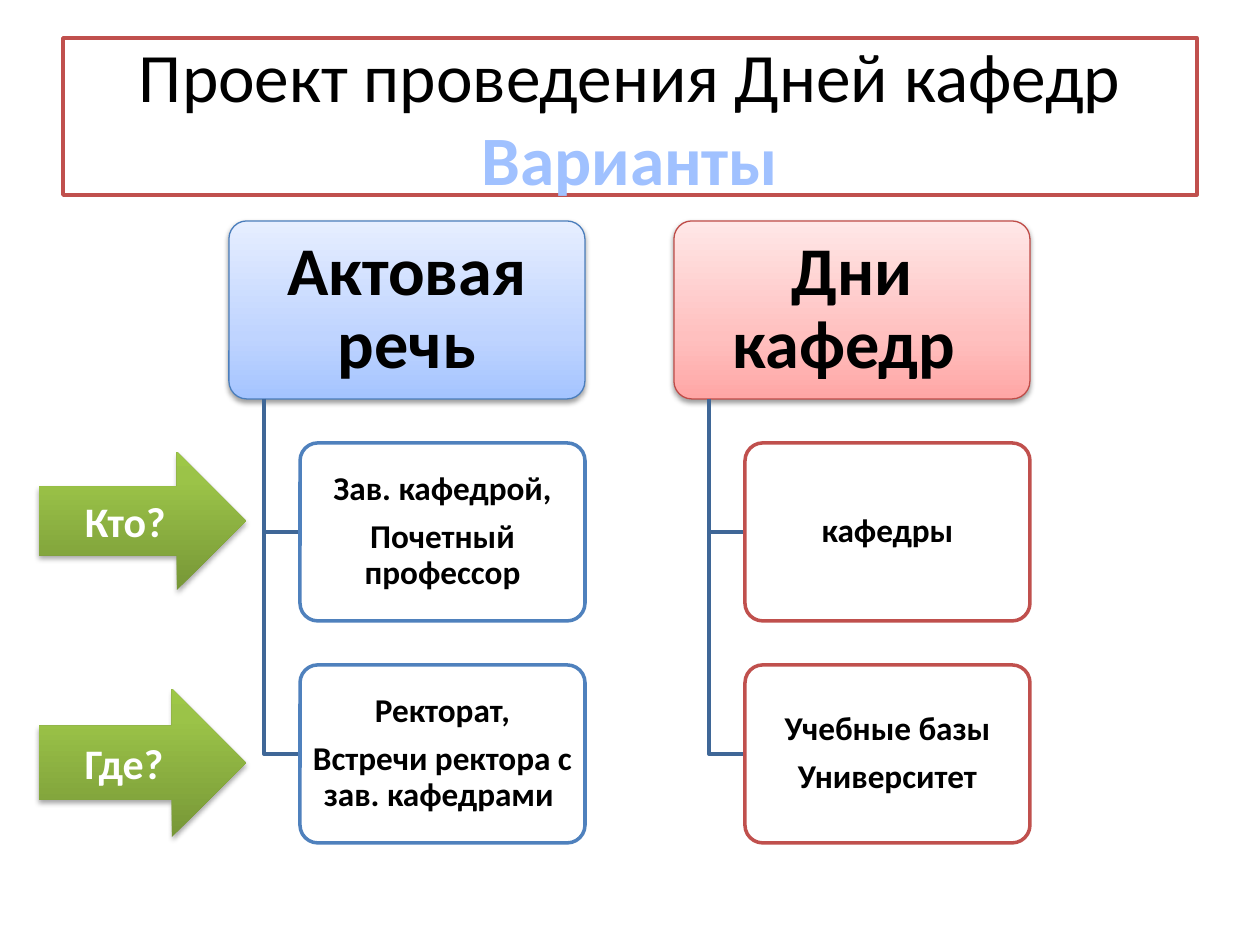
from lxml import etree
from pptx import Presentation, util as u
from pptx.dml.color import RGBColor
from pptx.enum import shapes, text
from pptx.oxml.ns import qn

TITLE = ("Проект проведения Дней кафедр", "Варианты")
COLUMNS = [
    dict(head="Актовая речь", tone="blue", cards=[
        ["Зав. кафедрой,", "Почетный профессор"],
        ["Ректорат,", "Встречи ректора с зав. кафедрами "]]),
    dict(head="Дни кафедр ", tone="red", cards=[
        ["кафедры"],
        ["Учебные базы", "Университет"]]),
]
ARROWS = [("Кто?", 452, 138), ("Где?", 689, 148)]

THEME = dict(
    font="Calibri", ink="000000", paper="FFFFFF", accent="A0C1FF",
    link="3F6797", frame="C0504D",
    blue=dict(edge="4B7EBC", card="4F81BD",
              grad=[(0, "A4C4FF"), (35, "BFD4FF"), (100, "E6EEFF")]),
    red=dict(edge="BF4C48", card="C0504D",
             grad=[(0, "FFA6A5"), (35, "FFC0BF"), (100, "FFE7E7")]),
    green=[(0, "779737"), (80, "9BC348"), (100, "9DC746")],
    title=39.6, head=39, card=19, arrow=24, line=2, thin=0.75,
)

PX = 914400 // 126
LEFT, TOP, COL_STEP, ROW_STEP = 229, 221, 445, 222
HEAD_W, BOX_H, INDENT = 356, 178, 71


def px(n):
    return u.Emu(round(n * PX))


def rgb(name):
    return RGBColor.from_string(name)


def gradient(sp, stops):
    sp.fill.gradient()
    sp.fill.gradient_angle = 90
    gs_list = sp._element.spPr.find(".//" + qn("a:gsLst"))
    for gs in list(gs_list):
        gs_list.remove(gs)
    for pos, color in stops:
        gs = etree.SubElement(gs_list, qn("a:gs"), pos=str(pos * 1000))
        etree.SubElement(gs, qn("a:srgbClr"), val=color)


def shadow(sp, alpha, dist):
    effects = sp._element.spPr.find(qn("a:effectLst"))
    outer = etree.SubElement(
        effects, qn("a:outerShdw"), blurRad=str(u.Pt(3.1)),
        dist=str(u.Pt(dist)), dir="5400000", rotWithShape="0")
    color = etree.SubElement(outer, qn("a:srgbClr"), val=THEME["ink"])
    etree.SubElement(color, qn("a:alpha"), val=str(alpha * 1000))


def outline(sp, color, width):
    sp.line.color.rgb = rgb(color)
    sp.line.width = u.Pt(width)


def add_box(s, kind, x, y, w, h, fill, line=None, width=0):
    sp = s.shapes.add_shape(kind, px(x), px(y), px(w), px(h))
    sp.shadow.inherit = False
    if isinstance(fill, list):
        gradient(sp, fill)
    else:
        sp.fill.solid()
        sp.fill.fore_color.rgb = rgb(fill)
    if line:
        outline(sp, line, width)
    else:
        sp.line.fill.background()
    if kind == shapes.MSO_SHAPE.ROUNDED_RECTANGLE:
        sp.adjustments[0] = 0.1
    return sp


def write(sp, lines, size, color, bold=True, insets=None, spacing=None):
    tf = sp.text_frame
    tf.word_wrap = True
    tf.vertical_anchor = text.MSO_ANCHOR.MIDDLE
    if insets:
        tf.margin_left = tf.margin_right = px(insets[0])
        tf.margin_top = tf.margin_bottom = px(insets[1])
    tf.text = "\n".join(lines)
    for p in tf.paragraphs:
        p.alignment = text.PP_ALIGN.CENTER
        if spacing:
            p.line_spacing = spacing
            p.space_after = u.Pt(7)
        for r in p.runs:
            r.font.name = THEME["font"]
            r.font.size = u.Pt(size)
            r.font.bold = bold
            r.font.color.rgb = rgb(color)


def add_elbow(s, x, top, bottom, right):
    fb = s.shapes.build_freeform(px(x), px(top), scale=1.0)
    fb.add_line_segments([(px(x), px(bottom)), (px(right), px(bottom))],
                         close=False)
    sp = fb.convert_to_shape()
    sp.shadow.inherit = False
    sp.fill.background()
    outline(sp, THEME["link"], THEME["line"])


def add_title(s):
    sp = add_box(s, shapes.MSO_SHAPE.RECTANGLE, 63, 38, 1134, 157,
                 THEME["paper"], THEME["frame"], THEME["line"])
    write(sp, ["\v".join(TITLE)], THEME["title"], THEME["ink"], bold=False)
    r = sp.text_frame.paragraphs[0].runs[1]
    r.font.bold = True
    r.font.color.rgb = rgb(THEME["accent"])


def add_column(s, x, column):
    tone = THEME[column["tone"]]
    rounded = shapes.MSO_SHAPE.ROUNDED_RECTANGLE
    head = add_box(s, rounded, x, TOP, HEAD_W, BOX_H,
                   tone["grad"], tone["edge"], THEME["thin"])
    shadow(head, 38, 1.6)
    write(head, [column["head"]], THEME["head"], THEME["ink"],
          insets=(10, 6), spacing=0.9)
    for row, lines in enumerate(column["cards"], 1):
        y = TOP + row * ROW_STEP
        add_elbow(s, x + INDENT // 2, TOP + BOX_H, y + BOX_H // 2, x + INDENT)
        card = add_box(s, rounded, x + INDENT, y, HEAD_W - INDENT, BOX_H,
                       THEME["paper"], tone["card"], THEME["line"])
        write(card, lines, THEME["card"], THEME["ink"],
              insets=(5, 4), spacing=0.9)


def main():
    prs = Presentation()
    prs.slide_width, prs.slide_height = u.Inches(10), u.Inches(7.5)
    s = prs.slides.add_slide(prs.slide_layouts[6])
    add_title(s)
    for i, column in enumerate(COLUMNS):
        add_column(s, LEFT + i * COL_STEP, column)
    for label, y, h in ARROWS:
        sp = add_box(s, shapes.MSO_SHAPE.RIGHT_ARROW, 39, y, 207, h,
                     THEME["green"])
        shadow(sp, 35, 1.8)
        write(sp, [label], THEME["arrow"], THEME["paper"])
    prs.save("out.pptx")


if __name__ == "__main__":
    main()
